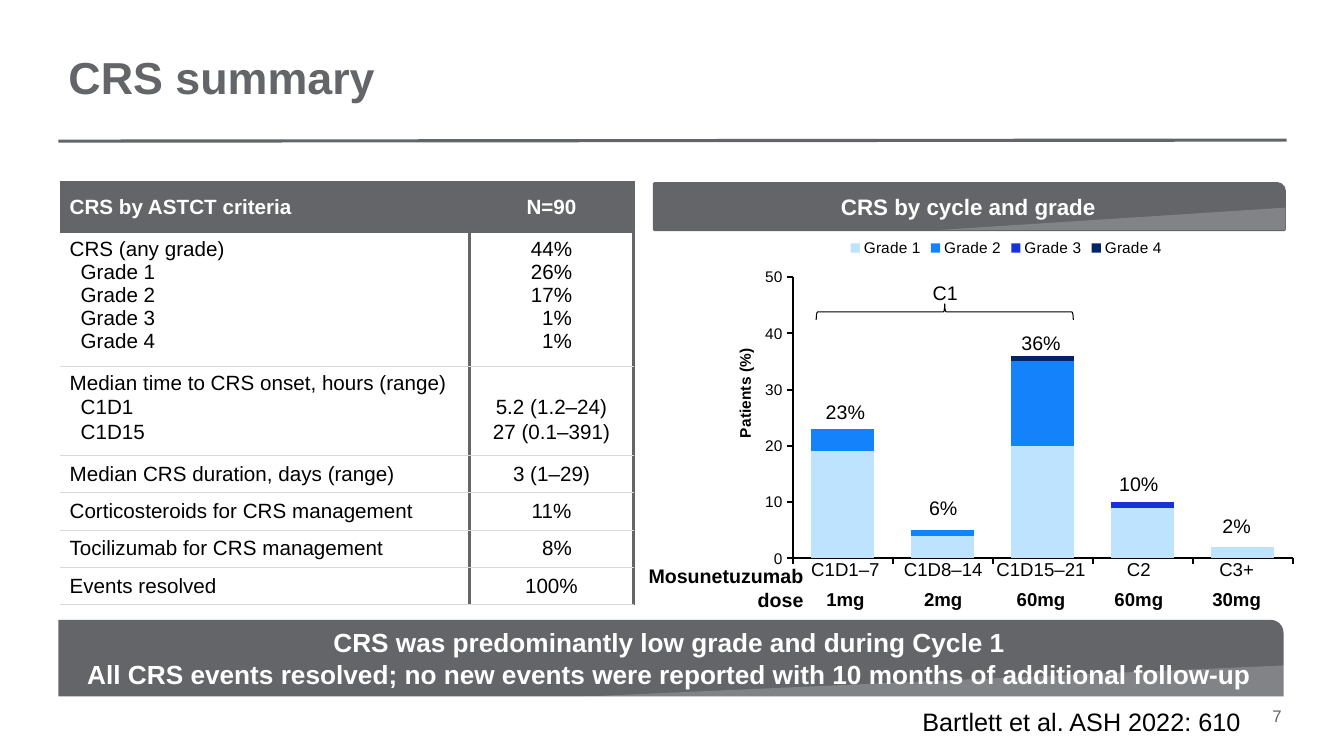
from lxml import etree
from pptx import Presentation
from pptx import util as u
from pptx.chart.data import CategoryChartData
from pptx.dml.color import RGBColor
from pptx.enum import chart as ch, shapes, text
from pptx.oxml import parse_xml
from pptx.oxml.ns import nsdecls, qn

Inches, Pt = u.Inches, u.Pt
COLORS = {"gray": "636569", "rule": "D9D9D9", "black": "000000", "white": "FFFFFF"}
GRADES = {
    "Grade 1": ("BDE3FF", (19, 4, 20, 9, 2)),
    "Grade 2": ("1482FA", (4, 1, 15, 0, 0)),
    "Grade 3": ("1533D8", (0, 0, 0, 1, 0)),
    "Grade 4": ("022366", (0, 0, 1, 0, 0)),
}
CYCLES = [
    ("C1D1–7", "1mg", "23%", 3.98),
    ("C1D8–14", "2mg", "6%", 4.93),
    ("C1D15–21", "60mg", "36%", 3.29),
    ("C2", "60mg", "10%", 4.69),
    ("C3+", "30mg", "2%", 5.11),
]
ROWS = [
    (0.51, "CRS by ASTCT criteria", "N=90"),
    (1.33, "CRS (any grade)\n Grade 1\n Grade 2\n Grade 3\n Grade 4", "44%\n26%\n17%\n 1%\n 1%"),
    (0.88, "Median time to CRS onset, hours (range)\n C1D1\n C1D15", "5.2 (1.2–24)\n27 (0.1–391)"),
    (0.37, "Median CRS duration, days (range)", "3 (1–29)"),
    (0.37, "Corticosteroids for CRS management", "11%"),
    (0.37, "Tocilizumab for CRS management", " 8%"),
    (0.37, "Events resolved", "100%"),
]
LEFT, CENTER, RIGHT = text.PP_ALIGN.LEFT, text.PP_ALIGN.CENTER, text.PP_ALIGN.RIGHT
MIDDLE, TOP = text.MSO_ANCHOR.MIDDLE, text.MSO_ANCHOR.TOP


def rgb(name):
    return RGBColor.from_string(COLORS.get(name, name))


def style_font(font, size, color="black", bold=False):
    font.name, font.size, font.bold = "Arial", Pt(size), bold
    font.color.rgb = rgb(color)


def write(tf, words, size, color="black", bold=False, align=CENTER, after=0):
    tf.text = words
    for p in tf.paragraphs:
        p.alignment, p.space_after = align, Pt(after)
        for r in p.runs:
            style_font(r.font, size, color, bold)


def add_text(s, box, words, size, anchor=MIDDLE, inset=0.0, **style):
    tf = s.shapes.add_textbox(*map(Inches, box)).text_frame
    tf.word_wrap, tf.vertical_anchor = True, anchor
    tf.margin_left = tf.margin_right = Inches(inset)
    write(tf, words, size, **style)
    return tf


def add_shape(s, kind, box, fill=None, line=None, width=1):
    sp = s.shapes.add_shape(kind, *map(Inches, box))
    sp.shadow.inherit = False
    if fill:
        sp.fill.solid()
        sp.fill.fore_color.rgb = rgb(fill)
    else:
        sp.fill.background()
    if line:
        sp.line.color.rgb = rgb(line)
        sp.line.width = Pt(width)
    else:
        sp.line.fill.background()
    return sp


def add_banner(s, box, wedge_box, words, size, line=None):
    sp = add_shape(s, shapes.MSO_SHAPE.ROUND_1_RECTANGLE, box, "gray", line, 2)
    sp.text_frame.vertical_anchor = MIDDLE
    sp.text_frame.word_wrap = True
    write(sp.text_frame, words, size, "white", True)
    wedge = add_shape(s, shapes.MSO_SHAPE.RIGHT_TRIANGLE, wedge_box, "white")
    wedge._element.spPr.find(qn("a:xfrm")).set("flipH", "1")
    color = wedge._element.spPr.find(qn("a:solidFill"))[0]
    etree.SubElement(color, qn("a:alpha")).set("val", "20000")


def set_borders(cell, sides):
    tc_pr = cell._tc.get_or_add_tcPr()
    for i, tag in enumerate(("lnL", "lnR", "lnT", "lnB")):
        color, width = sides.get(tag, (None, 0))
        fill = f'<a:solidFill><a:srgbClr val="{COLORS[color]}"/></a:solidFill>' if color else "<a:noFill/>"
        tc_pr.insert(i, parse_xml(f'<a:{tag} {nsdecls("a")} w="{Pt(width)}">{fill}</a:{tag}>'))


def fill_cell(cell, words, row, col):
    header = row == 0
    sides = {"lnR": ("gray", 2.25)}
    if col:
        sides["lnL"] = ("gray", 2.25)
    if not header:
        sides["lnB"] = ("rule", 1)
    if row > 1:
        sides["lnT"] = ("rule", 1)
    if header:
        cell.fill.solid()
        cell.fill.fore_color.rgb = rgb("gray")
    else:
        cell.fill.background()
    set_borders(cell, sides)
    cell.vertical_anchor = TOP if row in (1, 2) else MIDDLE
    cell.margin_left = Inches(0.05 if col else 0.1)
    cell.margin_right = Inches(0.05)
    cell.margin_top = Inches(0.29 if (row, col) == (2, 1) else 0.05)
    cell.margin_bottom = Inches(0.05)
    lines = words.split("\n")
    write(cell.text_frame, "\n".join(x.strip() for x in lines), 14.7,
          "white" if header else "black", header, CENTER if col else LEFT, 1 if row == 2 else 0)
    for p, entry in zip(cell.text_frame.paragraphs, lines):
        if entry.startswith(" "):
            p._p.get_or_add_pPr().set("marL", str(Inches(0.11)))


def add_crs_table(s):
    box = map(Inches, (0.59, 1.8, 5.69, 4.2))
    table = s.shapes.add_table(len(ROWS), 2, *box).table
    table.first_row = table.horz_banding = False
    for column, width in zip(table.columns, (4.07, 1.62)):
        column.width = Inches(width)
    for i, (height, *cells) in enumerate(ROWS):
        table.rows[i].height = Inches(height)
        for j, words in enumerate(cells):
            fill_cell(table.cell(i, j), words, i, j)


def layout_xml(inner=False, **values):
    target = '<c:layoutTarget val="inner"/>' if inner else ""
    modes = '<c:xMode val="edge"/><c:yMode val="edge"/>'
    sizes = "".join(f'<c:{k} val="{v}"/>' for k, v in values.items())
    return parse_xml(f'<c:layout {nsdecls("c")}><c:manualLayout>{target}{modes}{sizes}'
                     "</c:manualLayout></c:layout>")


def style_axis(axis):
    axis.has_major_gridlines = False
    axis.major_tick_mark = ch.XL_TICK_MARK.OUTSIDE
    axis.format.line.color.rgb = rgb("black")
    axis.format.line.width = Pt(1.5)
    style_font(axis.tick_labels.font, 11)


def add_crs_chart(s):
    data = CategoryChartData()
    data.categories = [str(i + 1) for i in range(len(CYCLES))]
    for name, (_, values) in GRADES.items():
        data.add_series(name, values)
    box = map(Inches, (7.02, 2.26, 5.92, 3.43))
    chart = s.shapes.add_chart(ch.XL_CHART_TYPE.COLUMN_STACKED, *box, data).chart
    style_font(chart.font, 11)
    chart.has_title = False
    chart.has_legend = True
    chart.legend.position = ch.XL_LEGEND_POSITION.TOP
    chart.legend.include_in_layout = False
    style_font(chart.legend.font, 11)
    plot = chart.plots[0]
    plot.gap_width, plot.overlap, plot.vary_by_categories = 60, 100, False
    for series, (color, _) in zip(plot.series, GRADES.values()):
        series.format.fill.solid()
        series.format.fill.fore_color.rgb = rgb(color)
    for axis in (chart.category_axis, chart.value_axis):
        style_axis(axis)
    chart.category_axis.tick_label_position = ch.XL_TICK_LABEL_POSITION.NONE
    axis = chart.value_axis
    axis.minimum_scale, axis.maximum_scale, axis.major_unit = 0, 50, 10
    write(axis.axis_title.text_frame, "Patients (%)", 11, bold=True)
    title = axis.axis_title._element
    for old in title.findall(qn("c:layout")):
        title.remove(old)
    title.find(qn("c:tx")).addnext(layout_xml(x=0.04, y=0.34))
    area = chart._chartSpace.chart.plotArea
    for old in area.findall(qn("c:layout")):
        area.remove(old)
    area.insert(0, layout_xml(True, x=0.142, y=0.143, w=0.838, h=0.813))


def add_chart_labels(s):
    for i, (cycle, dose, share, top) in enumerate(CYCLES):
        left = 7.86 + 0.97 * i
        tf = add_text(s, (left, 5.59, 1.05, 0.41), f"{cycle}\n{dose}", 13.3, after=5.3)
        tf.paragraphs[1].runs[0].font.bold = True
        add_text(s, (left + 0.2, top, 0.65, 0.21), share, 14, after=2.7)
    brace = add_shape(s, shapes.MSO_SHAPE.LEFT_BRACE, (9.29, 1.82, 0.16, 2.55), line="black", width=0.75)
    brace.rotation = 90
    add_text(s, (9.05, 2.8, 0.65, 0.21), "C1", 14, after=2.7)
    add_text(s, (6.1, 5.78, 1.87, 0.1), "Mosunetuzumab\vdose", 14, bold=True, align=RIGHT, after=2.7)


def add_rule(s):
    ends = map(Inches, (0.58, 1.4, 12.76, 1.39))
    rule = s.shapes.add_connector(shapes.MSO_CONNECTOR.STRAIGHT, *ends)
    rule.line.color.rgb = rgb("gray")
    rule.line.width = Pt(2.25)
    etree.SubElement(rule._element.spPr, qn("a:effectLst"))


def main():
    prs = Presentation()
    prs.slide_width, prs.slide_height = Inches(13.33), Inches(7.5)
    s = prs.slides.add_slide(prs.slide_layouts[6])
    add_text(s, (10.06, 6.95, 2.75, 0.3), "7", 12, TOP, 0.1, color="gray", align=RIGHT)
    add_rule(s)
    title = add_text(s, (0.58, 0.26, 9.02, 0.99), "CRS summary", 32, inset=0.1,
                     color="gray", bold=True, align=LEFT)
    title.paragraphs[0].line_spacing = Pt(38.4)
    add_crs_table(s)
    add_banner(s, (6.49, 1.82, 6.25, 0.46), (9.34, 2.06, 3.41, 0.22), "CRS by cycle and grade", 16, "gray")
    add_crs_chart(s)
    add_chart_labels(s)
    add_banner(s, (0.58, 6.15, 12.15, 0.76), (5.8, 6.6, 6.96, 0.31),
               "CRS was predominantly low grade and during Cycle 1\nAll CRS events resolved; "
               "no new events were reported with 10 months of additional follow-up", 18.7)
    citation = add_text(s, (9.05, 6.96, 3.39, 0.4), "Bartlett et al. ASH 2022: 610", 18, TOP, 0.1, align=LEFT)
    citation.word_wrap = False
    prs.save("out.pptx")


if __name__ == "__main__":
    main()
